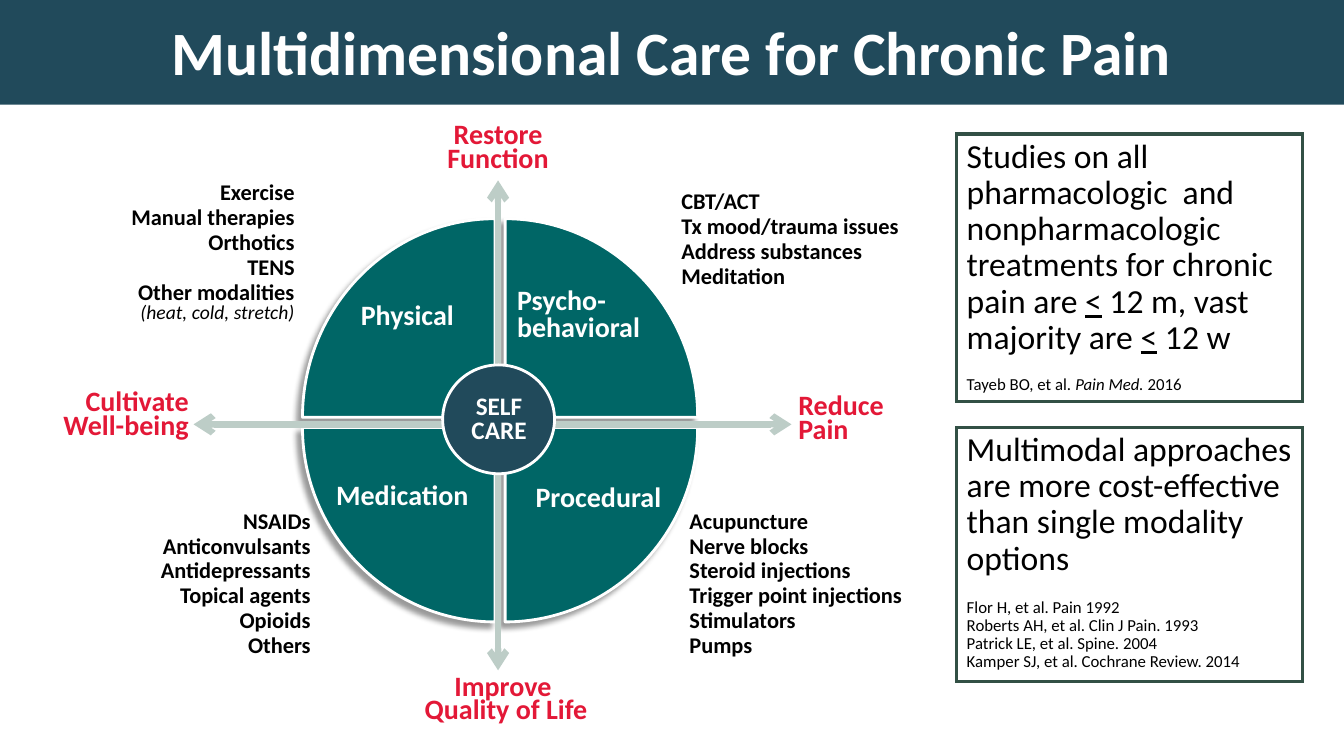
from lxml import etree
from pptx import Presentation
from pptx.dml.color import RGBColor
from pptx.enum.shapes import MSO_CONNECTOR, MSO_SHAPE
from pptx.enum.text import MSO_ANCHOR, PP_ALIGN
from pptx.oxml import parse_xml
from pptx.oxml.ns import nsdecls, qn
from pptx.util import Inches, Pt

TEAL = RGBColor(0x00, 0x66, 0x66)
NAVY = RGBColor(0x21, 0x4A, 0x5B)
RED = RGBColor(0xE3, 0x18, 0x37)
SAGE = RGBColor(0xBD, 0xCD, 0xC7)
FOREST = RGBColor(0x32, 0x50, 0x45)
WHITE = RGBColor(0xFF, 0xFF, 0xFF)
BLACK = RGBColor(0x00, 0x00, 0x00)

LEFT, CENTER, RIGHT = PP_ALIGN.LEFT, PP_ALIGN.CENTER, PP_ALIGN.RIGHT
GAP = 0.05  # from the wheel's centre lines to each quadrant
RADIUS_X = 1.91
ARC_PULL = 0.55  # control point distance of a quarter arc, as a share of its radius

ASIDE = [("(heat, cold, stretch)", {"size": Pt(14), "bold": False, "italic": True})]

# side x, side y, radius y, label, label box, label format, therapies, therapies box
QUADRANTS = [
    (-1, -1, 1.97, "Physical", (-1.67, -1.29, 1.5, 0.44), {"align": CENTER},
     ["Exercise", "Manual therapies", "Orthotics", "TENS", "Other modalities", ASIDE],
     (-5.16, -2.42, 3.22, 1.53)),
    (-1, 1, 1.93, "Medication", (-1.97, 0.54, 2, 0.4), {"align": CENTER, "spacing": 0.9},
     ["NSAIDs", "Anticonvulsants", "Antidepressants", "Topical agents", "Opioids", "Others"],
     (-4.08, 0.84, 2.3, 1.6)),
    (1, 1, 1.93, "Procedural", (0, 0.58, 1.95, 0.37), {"align": CENTER, "spacing": 0.8},
     ["Acupuncture", "Nerve blocks", "Steroid injections", "Trigger point injections",
      "Stimulators", "Pumps"],
     (1.78, 0.84, 2.64, 1.6)),
    (1, -1, 1.97, "Psycho-behavioral", (0.07, -1.37, 1.84, 0.64), {"spacing": 0.8},
     ["CBT/ACT", "Tx mood/trauma issues", "Address substances", "Meditation"],
     (1.7, -2.33, 2.9, 1.08)),
]
GOALS = [
    (["Cultivate", "Well-being"], (-4.98, -0.34, 1.99, 0.57), RIGHT),
    (["Reduce Pain"], (2.86, -0.3, 1.36, 0.57), LEFT),
    (["Improve ", "Quality of Life"], (-1.09, 2.48, 2.3, 0.57), CENTER),
    (["Restore Function"], (-0.8, -2.99, 1.56, 0.57), CENTER),
]
AXES = [(-3.04, 0.02, 2.89, 0.02), (-0.02, -2.4, -0.02, 2.46)]


def write(frame, paragraphs, size=20, color=BLACK, bold=False, align=LEFT,
          spacing=1.0, after=0, anchor=MSO_ANCHOR.TOP):
    """Fill a frame; a paragraph is a string or a list of (text, font changes)."""
    frame.word_wrap = True
    frame.vertical_anchor = anchor
    for index, runs in enumerate(paragraphs):
        paragraph = frame.paragraphs[0] if index == 0 else frame.add_paragraph()
        paragraph.alignment = align
        paragraph.line_spacing = spacing
        paragraph.space_after = Pt(after)
        for text, changes in [(runs, {})] if isinstance(runs, str) else runs:
            run = paragraph.add_run()
            run.text = text
            font = run.font
            font.name, font.size, font.bold = "Calibri", Pt(size), bold
            font.color.rgb = color
            for key, value in changes.items():
                setattr(font, key, value)


def text_box(slide, x, y, box, paragraphs, **fmt):
    left, top, width, height = box
    area = slide.shapes.add_textbox(Inches(x + left), Inches(y + top),
                                    Inches(width), Inches(height))
    write(area.text_frame, paragraphs, **fmt)
    return area.text_frame


def paint(shape, fill=None, line=None, weight=2):
    shape.shadow.inherit = False
    if fill is None:
        shape.fill.background()
    else:
        shape.fill.solid()
        shape.fill.fore_color.rgb = fill
    if line is None:
        shape.line.fill.background()
    else:
        shape.line.color.rgb = line
        shape.line.width = Pt(weight)


def add_shape(slide, kind, left, top, width, height, **style):
    shape = slide.shapes.add_shape(kind, Inches(left), Inches(top), Inches(width), Inches(height))
    paint(shape, **style)
    return shape


def cast_shadow(shape):
    shape._element.spPr.find(qn("a:effectLst")).append(parse_xml(
        f'<a:outerShdw {nsdecls("a")} blurRad="{Pt(4)}" dist="{Pt(5)}" dir="8100000" '
        'algn="tr" rotWithShape="0"><a:srgbClr val="000000"><a:alpha val="40000"/>'
        '</a:srgbClr></a:outerShdw>'))


def bend_first_side(shape, *controls):
    """Turn the outline's first straight side into a curve with two control points."""
    side = next(shape._element.iter(qn("a:lnTo")))
    curve = etree.Element(qn("a:cubicBezTo"))
    for x, y in controls:
        etree.SubElement(curve, qn("a:pt"), x=str(Inches(x) - shape.left),
                         y=str(Inches(y) - shape.top))
    curve.append(side[0])
    side.getparent().replace(side, curve)


def quadrant(slide, x, y, side_x, side_y, radius_y, label, label_box, label_format,
             therapies, therapy_box):
    """Quarter of the wheel centred on x, y, with its label and therapies."""
    corner_x, corner_y = x + side_x * GAP, y + side_y * GAP
    reach_x, reach_y = side_x * RADIUS_X, side_y * radius_y
    builder = slide.shapes.build_freeform(Inches(corner_x + reach_x), Inches(corner_y))
    builder.add_line_segments([(Inches(corner_x), Inches(corner_y + reach_y)),
                               (Inches(corner_x), Inches(corner_y))], close=True)
    quarter = builder.convert_to_shape()
    bend_first_side(quarter, (corner_x + reach_x, corner_y + ARC_PULL * reach_y),
                    (corner_x + ARC_PULL * reach_x, corner_y + reach_y))
    paint(quarter, TEAL, WHITE)
    cast_shadow(quarter)

    text_box(slide, x, y, label_box, [label], color=WHITE, bold=True, **label_format)
    frame = text_box(slide, x, y, therapy_box, therapies, size=16, bold=True,
                     align=RIGHT if side_x < 0 else LEFT, spacing=0.8, after=2.4)
    if therapies[-1] is ASIDE:
        frame.paragraphs[-2].space_after = Pt(0)


def axis(slide, x, y, x1, y1, x2, y2):
    arrow = slide.shapes.add_connector(MSO_CONNECTOR.STRAIGHT, Inches(x + x1), Inches(y + y1),
                                       Inches(x + x2), Inches(y + y2))
    arrow.line.color.rgb = SAGE
    arrow.line.width = Pt(4.5)
    line = arrow.line._get_or_add_ln()
    for end in ("a:headEnd", "a:tailEnd"):
        etree.SubElement(line, qn(end), type="arrow")
    etree.SubElement(arrow._element.spPr, qn("a:effectLst"))


def goals_and_core(slide, x, y):
    for goal, box, align in GOALS:
        text_box(slide, x, y, box, goal, color=RED, bold=True, align=align, spacing=0.7)
    for ends in AXES:
        axis(slide, x, y, *ends)
    add_shape(slide, MSO_SHAPE.OVAL, x - 0.57, y - 0.57, 1.11, 1.08, fill=NAVY, line=WHITE)
    text_box(slide, x, y, (-0.58, -0.31, 1.14, 0.59), ["SELF", "CARE"], size=18, color=WHITE,
             bold=True, align=CENTER, spacing=0.8)


def title_band(slide, left, top, width, height):
    band = add_shape(slide, MSO_SHAPE.RECTANGLE, left, top, width, height, fill=NAVY)
    write(band.text_frame, ["Multidimensional Care for Chronic Pain"], size=44, color=WHITE,
          bold=True, align=CENTER, anchor=MSO_ANCHOR.MIDDLE)


def evidence_card(slide, left, top, width, height, finding, sources, gap, source_spacing):
    card = add_shape(slide, MSO_SHAPE.RECTANGLE, left, top, width, height,
                     line=FOREST, weight=2.25)
    etree.SubElement(card.line._get_or_add_ln(), qn("a:miter"), lim="800000")
    small = {"size": Pt(12)}
    cited = [[(text, small | changes) for text, changes in source] for source in sources]
    write(card.text_frame, [finding, *cited], size=24, spacing=0.9)
    references = card.text_frame.paragraphs[1:]
    references[0].space_before = Pt(gap)
    for reference in references:
        reference.line_spacing = source_spacing


def main():
    deck = Presentation()
    deck.slide_width, deck.slide_height = Inches(13.33), Inches(7.5)
    slide = deck.slides.add_slide(deck.slide_layouts[6])
    wheel_x, wheel_y = 4.96, 4.19
    for parts in QUADRANTS:
        quadrant(slide, wheel_x, wheel_y, *parts)
    title_band(slide, 0, -0.02, 13.33, 1.06)
    goals_and_core(slide, wheel_x, wheel_y)

    underlined = ("<", {"underline": True})
    evidence_card(
        slide, 9.49, 1.33, 3.43, 2.65,
        [("Studies on all pharmacologic  and nonpharmacologic treatments for chronic pain are ", {}),
         underlined, (" 12 m, vast majority are ", {}), underlined, (" 12 w", {})],
        [[("Tayeb BO, et al. ", {}), ("Pain Med. ", {"italic": True}), ("2016", {})]], 12.2, 1.0)
    evidence_card(
        slide, 9.49, 4.24, 3.43, 2.52,
        "Multimodal approaches are more cost-effective than single modality options",
        [[(source, {})] for source in (
            "Flor H, et al. Pain 1992", "Roberts AH, et al. Clin J Pain. 1993",
            "Patrick LE, et al. Spine. 2004", "Kamper SJ, et al. Cochrane Review. 2014")],
        15.4, 0.9)
    deck.save("out.pptx")


if __name__ == "__main__":
    main()
